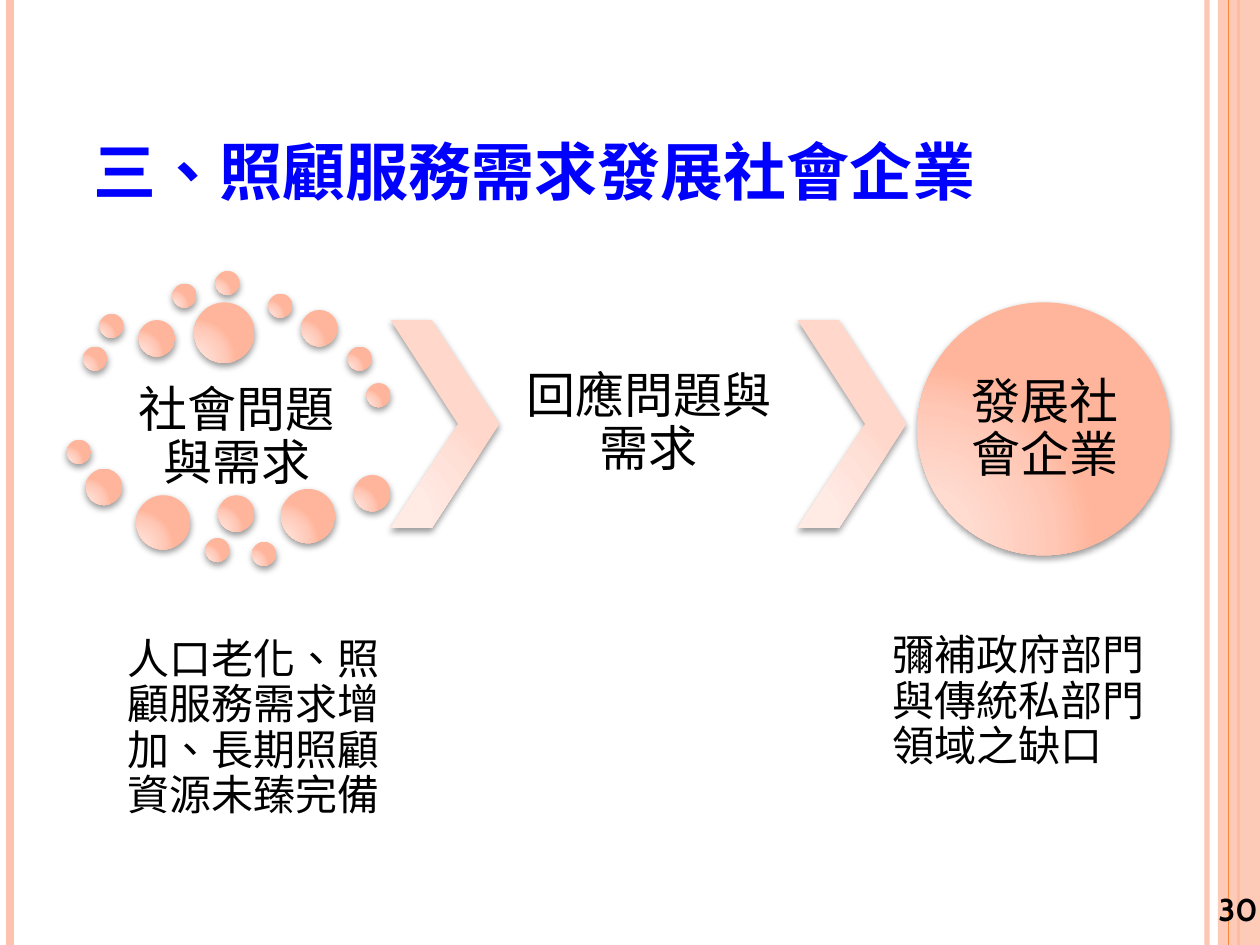
from lxml.etree import SubElement
from pptx import Presentation
from pptx.dml.color import RGBColor
from pptx.enum.shapes import MSO_CONNECTOR, MSO_SHAPE
from pptx.enum.text import MSO_ANCHOR, PP_ALIGN
from pptx.oxml import parse_xml
from pptx.oxml.ns import nsdecls, qn
from pptx.util import Pt

COLOURS = {
    "text": "000000",
    "title": "0000FF",
    "band": "FEC3AE",
    "rule": "FE8637",
    "shadow": "000000",
}
STOPS = (0, 30, 75, 100)
GRADIENTS = {
    "ball": ("FFDED5", "FFDBD0", "FFC8B6", "FFB59B"),
    "arrow": ("FFECE7", "FFEAE4", "FFE0D7", "FFD7CB"),
}
EAST_ASIAN_FONT = "Noto Sans CJK SC"

# Diameter of the scattered balls, then the left and top of each one
BALLS = {
    13.8: [(47.5, 198), (56.9, 179.3), (98.6, 162), (123.1, 154.8),
           (153.4, 167.8), (198.7, 198), (209.5, 218.9), (38.2, 251.3),
           (117.4, 307.4), (144, 309.6)],
    20.9: [(79.2, 182.9), (172.1, 177.1), (49, 267.8), (124.6, 283),
           (202.3, 271.4)],
    31: [(77.8, 283), (160.6, 279.4)],
    34.6: [(110.9, 172.8)],
}


def colour(name):
    return RGBColor.from_string(COLOURS[name])


def set_alpha(fill_parent, percent):
    """Make the solid colour below the given element partly transparent."""
    tone = fill_parent.find(".//" + qn("a:srgbClr"))
    SubElement(tone, qn("a:alpha"), val=str(percent * 1000))


class SlideBuilder:
    def __init__(self, slide):
        self.slide = slide

    def vertical_line(self, x, width, tone, alpha=None):
        line = self.slide.shapes.add_connector(
            MSO_CONNECTOR.STRAIGHT, Pt(x), Pt(0), Pt(x), Pt(540))
        line.line.color.rgb = colour(tone)
        line.line.width = Pt(width)
        properties = line._element.spPr
        SubElement(properties, qn("a:effectLst"))
        if alpha:
            set_alpha(properties, alpha)

    def shape(self, kind, left, top, width, height):
        shape = self.slide.shapes.add_shape(
            kind, Pt(left), Pt(top), Pt(width), Pt(height))
        shape.shadow.inherit = False
        shape.line.fill.background()
        return shape

    def band(self, left, top, width, height, tone, alpha):
        shape = self.shape(MSO_SHAPE.RECTANGLE, left, top, width, height)
        shape.fill.solid()
        shape.fill.fore_color.rgb = colour(tone)
        set_alpha(shape._element.spPr, alpha)

    def glossy(self, kind, left, top, width, height, gradient):
        """Add a shape with a circular gradient and a soft shadow below it."""
        shape = self.shape(kind, left, top, width, height)
        stops = "".join(
            f'<a:gs pos="{stop * 1000}"><a:srgbClr val="{tone}"/></a:gs>'
            for stop, tone in zip(STOPS, GRADIENTS[gradient]))
        properties = shape._element.spPr
        properties.find(qn("a:prstGeom")).addnext(parse_xml(
            f'<a:gradFill {nsdecls("a")} rotWithShape="1"><a:gsLst>{stops}</a:gsLst>'
            '<a:path path="circle"><a:fillToRect l="5000" t="100000" '
            'r="120000" b="10000"/></a:path></a:gradFill>'))
        properties.find(qn("a:effectLst")).append(parse_xml(
            f'<a:outerShdw {nsdecls("a")} blurRad="{Pt(4)}" dist="{Pt(2)}" '
            'dir="5400000" rotWithShape="0">'
            f'<a:srgbClr val="{COLOURS["shadow"]}"><a:alpha val="40000"/></a:srgbClr>'
            '</a:outerShdw>'))
        return shape

    def chevron(self, left):
        shape = self.glossy(MSO_SHAPE.CHEVRON, left, 182.9, 62.2, 118.8, "arrow")
        shape.adjustments[0] = 0.62

    def text(self, text, left, top, width, height, size=28, font="Arial",
             tone="text", bold=False, align=PP_ALIGN.CENTER, inset=None,
             spacing=0.9, after=0.35, anchor=MSO_ANCHOR.MIDDLE):
        """Add a text box; each line of the text is a paragraph, and the
        space after a paragraph is a share of the font size."""
        box = self.slide.shapes.add_textbox(Pt(left), Pt(top), Pt(width), Pt(height))
        frame = box.text_frame
        frame.word_wrap = True
        frame.vertical_anchor = anchor
        if inset is not None:
            frame.margin_left = frame.margin_right = Pt(inset)
            frame.margin_top = frame.margin_bottom = Pt(inset)
        frame.text = text
        for paragraph in frame.paragraphs:
            paragraph.alignment = align
            paragraph.line_spacing = spacing
            paragraph.space_after = Pt(after * size)
            run = paragraph.runs[0]
            run.font.size = Pt(size)
            run.font.bold = bold
            run.font.name = font
            run.font.color.rgb = colour(tone)
            properties = run._r.get_or_add_rPr()
            properties.set("lang", "zh-TW")
            SubElement(properties, qn("a:ea"), typeface=EAST_ASIAN_FONT)


def main():
    presentation = Presentation()
    presentation.slide_width, presentation.slide_height = Pt(720), Pt(540)
    builder = SlideBuilder(
        presentation.slides.add_slide(presentation.slide_layouts[6]))

    builder.vertical_line(689.8, 3, "band", alpha=93)
    builder.vertical_line(5.8, 4.5, "band")
    builder.vertical_line(707.8, 1.5, "rule")
    builder.band(696, 0, 24, 540, "band", alpha=87)
    builder.vertical_line(702, 0.75, "rule")

    builder.text("社會問題\n與需求", 48.2, 213.1, 174.2, 82.8, inset=3, spacing=Pt(21))
    builder.text("人口老化、照顧服務需求增加、長期照顧資源未臻完備",
                 59.8, 330.5, 169.9, 172.1, size=24, inset=2.4)
    for diameter, places in BALLS.items():
        for left, top in places:
            builder.glossy(MSO_SHAPE.OVAL, left, top, diameter, diameter, "ball")

    builder.chevron(223.2)
    builder.text("回應問題與需求", 285.8, 182.9, 169.9, 118.8, inset=3)
    builder.text("彌補政府部門與傳統私部門領域之缺口", 507.6, 349.2, 169.9, 104.4,
                 size=24, inset=2.4, align=PP_ALIGN.LEFT)
    builder.chevron(455.8)
    builder.glossy(MSO_SHAPE.OVAL, 524.2, 172.8, 144.5, 144.5, "ball")
    builder.text("發展社會企業", 545.8, 194.4, 102.2, 102.2, inset=0)

    builder.text("30", 683.3, 499, 48.2, 41, size=18, font="Cabin", bold=True,
                 spacing=1.0, after=0)
    builder.text("三、照顧服務需求發展社會企業", 46.1, 72, 540.7, 51.1, size=36,
                 font=EAST_ASIAN_FONT, tone="title", bold=True,
                 align=PP_ALIGN.LEFT, spacing=1.0, after=0, anchor=MSO_ANCHOR.TOP)

    presentation.save("out.pptx")


if __name__ == "__main__":
    main()
